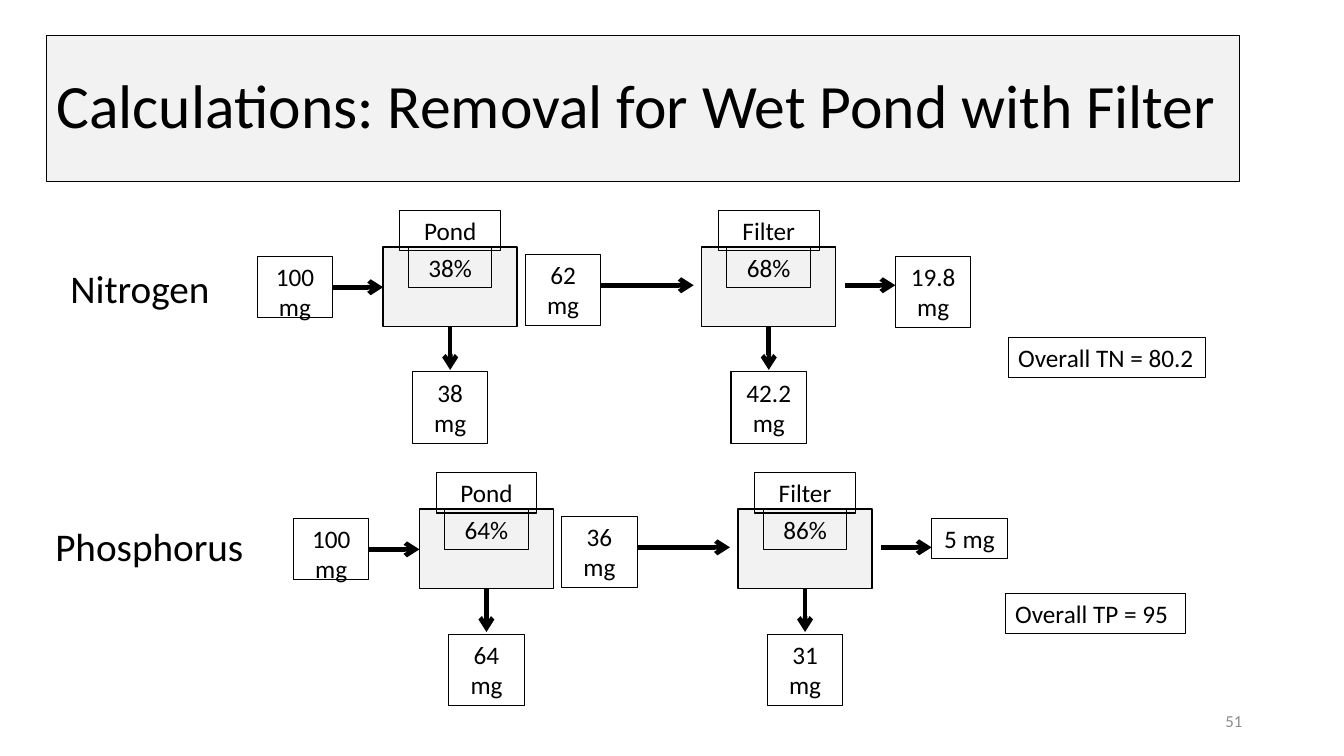
from lxml.etree import SubElement
from pptx import Presentation
from pptx.dml.color import RGBColor
from pptx.enum.shapes import MSO_CONNECTOR, MSO_SHAPE
from pptx.enum.text import MSO_ANCHOR, MSO_AUTO_SIZE, PP_ALIGN
from pptx.oxml.ns import qn
from pptx.util import Inches, Pt

BLACK = RGBColor(0x00, 0x00, 0x00)
WHITE = RGBColor(0xFF, 0xFF, 0xFF)
PALE = RGBColor(0xF2, 0xF2, 0xF2)
GREY = RGBColor(0x8C, 0x8C, 0x8C)

TITLE = "Calculations: Removal for Wet Pond with Filter"
SLIDE_NUMBER = "51"

# Stages: name, removal rate, amount removed
CHAINS = [
    {
        "origin": (2.55, 2.09),
        "inflow": "100 mg",
        "stages": [("Pond", "38%", "38 mg"), ("Filter", "68%", "42.2 mg")],
        "between": "62 mg",
        "outflow": ("19.8 mg", 0.71),
        "label": ("Nitrogen", 0.6, 2.57, 1.6),
        "overall": ("Overall TN = 80.2", 10, 3.35, 1.96),
    },
    {
        "origin": (2.91, 4.69),
        "inflow": "100 mg",
        "stages": [("Pond", "64%", "64 mg"), ("Filter", "86%", "31 mg")],
        "between": "36 mg",
        "outflow": ("5 mg", 0.4),
        "label": ("Phosphorus", 0.45, 5.13, 2.09),
        "overall": ("Overall TP = 95", 9.97, 5.89, 1.79),
    },
]

# Measures of one chain, from its origin
STAGE_LEFT, STAGE_TOP, STAGE_PITCH = 1.25, 0.36, 3.16
STAGE_WIDTH, STAGE_HEIGHT = 1.33, 0.79
AMOUNT_WIDTH, AMOUNT_HEIGHT, LABEL_HEIGHT = 0.75, 0.71, 0.4


def write(shape, text, size=18, color=BLACK, align=PP_ALIGN.LEFT,
          anchor=MSO_ANCHOR.TOP, wrap=True):
    frame = shape.text_frame
    frame.text = text
    frame_format = {"auto_size": MSO_AUTO_SIZE.NONE, "word_wrap": wrap,
                    "vertical_anchor": anchor}
    for name, value in frame_format.items():
        setattr(frame, name, value)
    paragraph = frame.paragraphs[0]
    paragraph.alignment = align
    font = paragraph.runs[0].font
    for name, value in {"name": "Calibri", "size": Pt(size)}.items():
        setattr(font, name, value)
    font.color.rgb = color


def outline(shape, fill=None, width=0.75):
    if fill is None:
        shape.fill.background()
    else:
        shape.fill.solid()
        shape.fill.fore_color.rgb = fill
    shape.line.color.rgb = BLACK
    shape.line.width = Pt(width)


def add_box(shapes, left, top, width, height, text=None, fill=None,
            line_width=0.75, align=PP_ALIGN.CENTER, wrap=True):
    box = shapes.add_shape(MSO_SHAPE.RECTANGLE, Inches(left), Inches(top),
                           Inches(width), Inches(height))
    box.shadow.inherit = False
    outline(box, fill, line_width)
    if text:
        write(box, text, align=align, wrap=wrap)


def add_text(shapes, text, left, top, width, height, **text_format):
    box = shapes.add_textbox(Inches(left), Inches(top), Inches(width), Inches(height))
    write(box, text, **text_format)


def add_arrow(shapes, start_x, start_y, end_x, end_y):
    arrow = shapes.add_connector(MSO_CONNECTOR.STRAIGHT, Inches(start_x),
                                 Inches(start_y), Inches(end_x), Inches(end_y))
    arrow.line.color.rgb = BLACK
    arrow.line.width = Pt(3.25)
    SubElement(arrow.line._get_or_add_ln(), qn("a:tailEnd"), type="arrow")
    SubElement(arrow._element.spPr, qn("a:effectLst"))


def add_stage(shapes, left, top, name, rate, removed):
    """Draw a treatment step with its rate and the amount it removes below."""
    center = left + STAGE_WIDTH / 2
    box_top = top + STAGE_TOP
    bottom = box_top + STAGE_HEIGHT
    add_box(shapes, left, box_top, STAGE_WIDTH, STAGE_HEIGHT, fill=PALE, line_width=1)
    for text, width, label_top in [(rate, 0.83, box_top), (name, 1, top)]:
        add_box(shapes, center - width / 2, label_top, width, LABEL_HEIGHT, text)
    add_arrow(shapes, center, bottom, center, bottom + 0.43)
    add_box(shapes, center - AMOUNT_WIDTH / 2, bottom + 0.45,
            AMOUNT_WIDTH, AMOUNT_HEIGHT, removed)


def add_chain(slide, chain):
    left, top = chain["origin"]
    shapes = slide.shapes.add_group_shape().shapes
    for index, stage in enumerate(chain["stages"]):
        add_stage(shapes, left + STAGE_LEFT + index * STAGE_PITCH, top, *stage)

    outflow, outflow_height = chain["outflow"]
    amounts = [
        (chain["inflow"], 0, 0.45, 0.61),
        (chain["between"], 2.66, 0.43, AMOUNT_HEIGHT),
        (outflow, 6.33, 0.45, outflow_height),
    ]
    for text, x, y, height in amounts:
        add_box(shapes, left + x, top + y, AMOUNT_WIDTH, height, text)
    for start, end, y in [(0.75, 1.25, 0.76), (3.41, 4.33, 0.74), (5.83, 6.33, 0.74)]:
        add_arrow(shapes, left + start, top + y, left + end, top + y)

    add_text(slide.shapes, *chain["label"], 0.57, size=28, wrap=False)
    text, x, y, width = chain["overall"]
    add_box(slide.shapes, x, y, width, LABEL_HEIGHT, text, WHITE,
            align=PP_ALIGN.LEFT, wrap=False)


def main():
    presentation = Presentation()
    presentation.slide_width = Inches(13.33)
    presentation.slide_height = Inches(7.5)
    slide = presentation.slides.add_slide(presentation.slide_layouts[5])

    title = slide.shapes.title
    place = {"left": 0.46, "top": 0.35, "width": 11.83, "height": 1.45}
    for name, value in place.items():
        setattr(title, name, Inches(value))
    outline(title, PALE)
    write(title, TITLE, size=44, anchor=MSO_ANCHOR.MIDDLE)
    title.text_frame.paragraphs[0].line_spacing = 0.9

    for chain in CHAINS:
        add_chain(slide, chain)
    add_text(slide.shapes, SLIDE_NUMBER, 9.42, 6.95, 3, 0.4, size=12, color=GREY,
             align=PP_ALIGN.RIGHT, anchor=MSO_ANCHOR.MIDDLE)
    presentation.save("out.pptx")


if __name__ == "__main__":
    main()
